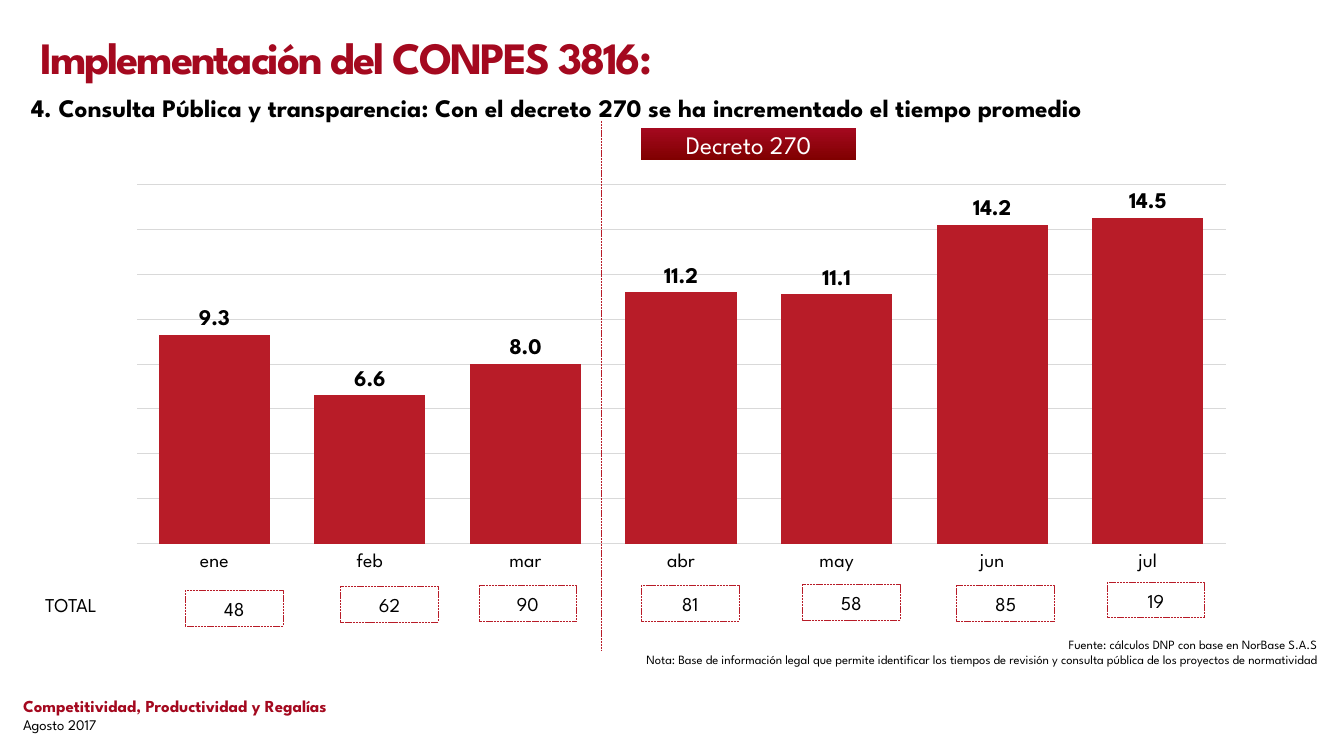
from lxml.etree import SubElement
from pptx import Presentation
from pptx.chart.data import CategoryChartData
from pptx.dml.color import RGBColor
from pptx.enum.chart import XL_CHART_TYPE, XL_LABEL_POSITION, XL_TICK_LABEL_POSITION, XL_TICK_MARK
from pptx.enum.dml import MSO_LINE
from pptx.enum.shapes import MSO_CONNECTOR, MSO_SHAPE
from pptx.enum.text import MSO_ANCHOR, PP_ALIGN
from pptx.oxml.ns import qn
from pptx.util import Inches, Pt

FONT = "League Spartan"
CRIMSON, MAROON, BAR_RED = "A4091F", "800000", "B81C28"
BLACK, WHITE, GRID_GREY = "000000", "FFFFFF", "D9D9D9"
MONTHS = ["ene", "feb", "mar", "abr", "may", "jun", "jul"]
AVERAGE_DAYS = [9.3, 6.6, 8.0, 11.2, 11.1, 14.2, 14.5]
TOTALS = [(48, 1.84, 5.86), (62, 3.38, 5.82), (90, 4.75, 5.81), (81, 6.36, 5.81),
          (58, 7.96, 5.8), (85, 9.49, 5.81), (19, 10.98, 5.78)]


def rgb(hex_code):
    """Turn a hex string into a colour."""
    return RGBColor.from_string(hex_code)


def style_font(font, size, color=BLACK, bold=False):
    """Set typeface, size, colour and weight."""
    font.name, font.size, font.bold = FONT, Pt(size), bold
    font.color.rgb = rgb(color)


def style_line(line, color, width, dash=None):
    """Set colour, width and dash of a line."""
    line.color.rgb = rgb(color)
    line.width = Pt(width)
    if dash:
        line.dash_style = dash


def write(frame, lines, align=PP_ALIGN.LEFT, anchor=MSO_ANCHOR.TOP):
    """Fill a text frame with (text, size, colour, bold) lines."""
    frame.word_wrap = True
    frame.vertical_anchor = anchor
    for index, (text, *style) in enumerate(lines):
        paragraph = frame.paragraphs[0] if index == 0 else frame.add_paragraph()
        paragraph.alignment = align
        run = paragraph.add_run()
        run.text = text
        style_font(run.font, *style)


def add_text(slide, box, lines, **placing):
    """Place a text box and return its frame."""
    frame = slide.shapes.add_textbox(*map(Inches, box)).text_frame
    write(frame, lines, **placing)
    return frame


def add_rectangle(slide, box, text, size, color):
    """Place a rectangle with centred text."""
    rectangle = slide.shapes.add_shape(MSO_SHAPE.RECTANGLE, *map(Inches, box))
    rectangle.shadow.inherit = False
    write(rectangle.text_frame, [(text, size, color)], PP_ALIGN.CENTER, MSO_ANCHOR.MIDDLE)
    return rectangle


def add_heading(slide, left, top, width):
    """Place the title and the subtitle below it."""
    title = add_text(slide, (left + 0.09, top, width, 0.61),
                     [("Implementación del CONPES 3816:", 32, CRIMSON, True)])
    title.paragraphs[0].runs[0].font._element.set("spc", "-150")
    subtitle = add_text(slide, (left, top + 0.65, width, 0.39), [
        ("4. Consulta Pública y transparencia: Con el decreto 270 se ha "
         "incrementado el tiempo promedio", 18, BLACK, True)])
    subtitle.paragraphs[0].line_spacing = 0.9


def add_average_chart(slide, box):
    """Place the column chart of average consultation time."""
    data = CategoryChartData(number_format="0.0")
    data.categories = MONTHS
    data.add_series("Series 1", AVERAGE_DAYS)
    chart = slide.shapes.add_chart(
        XL_CHART_TYPE.COLUMN_CLUSTERED, *map(Inches, box), data).chart
    chart.has_legend = chart.has_title = False
    style_font(chart.font, 10)

    months = chart.category_axis
    months.major_tick_mark = months.minor_tick_mark = XL_TICK_MARK.NONE
    months.tick_label_position = XL_TICK_LABEL_POSITION.LOW
    style_font(months.tick_labels.font, 14)
    style_line(months.format.line, GRID_GREY, 0.75)

    days = chart.value_axis
    days.visible = False
    days.minimum_scale, days.maximum_scale, days.major_unit = 0, 16, 2
    days.has_major_gridlines = True
    style_line(days.major_gridlines.format.line, GRID_GREY, 0.75)

    plot = chart.plots[0]
    plot.gap_width, plot.overlap, plot.vary_by_categories = 40, -27, False
    averages = plot.series[0]
    averages.format.fill.solid()
    averages.format.fill.fore_color.rgb = rgb(BAR_RED)
    labels = averages.data_labels
    labels.show_value = True
    labels.position = XL_LABEL_POSITION.OUTSIDE_END
    labels.number_format, labels.number_format_is_linked = "0.0", False
    style_font(labels.font, 16, BLACK, True)


def add_decree_marker(slide, left, top, height):
    """Place the dashed divider and the decree label to its right."""
    divider = slide.shapes.add_connector(
        MSO_CONNECTOR.STRAIGHT, *map(Inches, (left, top, left, top + height)))
    style_line(divider.line, BAR_RED, 0.5, MSO_LINE.SQUARE_DOT)
    SubElement(divider._element.spPr, qn("a:effectLst"))

    decree = add_rectangle(slide, (left + 0.4, top + 0.07, 2.13, 0.32),
                           "Decreto 270", 18, WHITE)
    decree.line.fill.background()
    decree.fill.gradient()
    decree.fill.gradient_angle = 270
    for stop, color, position in zip(decree.fill.gradient_stops, (CRIMSON, MAROON), (0, 1)):
        stop.color.rgb, stop.position = rgb(color), position


def add_totals(slide, left, top):
    """Place the row label and a dashed box for each month's total."""
    add_text(slide, (left, top, 1.11, 0.34), [("TOTAL", 14)])
    for total, box_left, box_top in TOTALS:
        total_box = add_rectangle(slide, (box_left, box_top, 0.97, 0.35), str(total), 14, BLACK)
        total_box.fill.background()
        style_line(total_box.line, BAR_RED, 0.5, MSO_LINE.SQUARE_DOT)


def add_source_notes(slide, box):
    """Place the right-aligned source and note."""
    add_text(slide, box, [
        ("Fuente: cálculos DNP con base en NorBase S.A.S", 9),
        ("Nota: Base de información legal que permite identificar los tiempos de revisión "
         "y consulta pública de los proyectos de normatividad", 9),
    ], align=PP_ALIGN.RIGHT, anchor=MSO_ANCHOR.MIDDLE)


def add_footer(slide, box):
    """Place the programme name and date."""
    footer = add_text(slide, box, [
        ("Competitividad, Productividad y Regalías", 12, CRIMSON, True),
        ("Agosto 2017", 10.5)])
    footer.margin_top = footer.margin_bottom = Inches(0.1)


def main():
    """Build and save the slide."""
    deck = Presentation()
    deck.slide_width, deck.slide_height = Inches(13.33), Inches(7.5)
    slide = deck.slides.add_slide(deck.slide_layouts[6])
    add_footer(slide, (0.13, 6.8, 9.15, 0.55))
    add_average_chart(slide, (1.13, 1.75, 11.25, 4))
    add_decree_marker(slide, 5.96, 1.2, 5.26)
    add_source_notes(slide, (3.73, 6.33, 9.43, 0.28))
    add_totals(slide, 0.35, 5.83)
    add_heading(slide, 0.21, 0.25, 12.7)
    deck.save("out.pptx")


if __name__ == "__main__":
    main()
